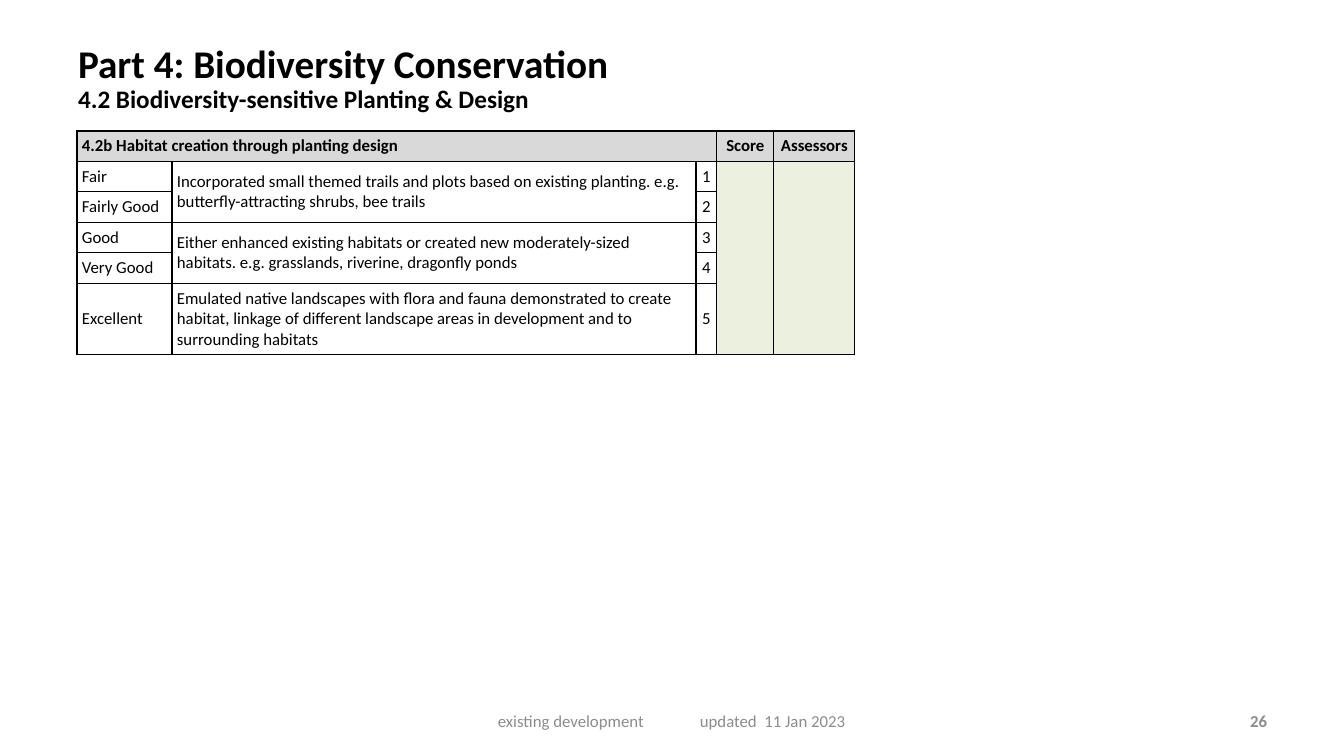
"""Build the scoring slide for planting design in biodiversity conservation."""
from lxml import etree
from pptx import Presentation
from pptx import util as u
from pptx.dml.color import RGBColor
from pptx.enum import text
from pptx.oxml.ns import qn

EMU_PER_PX = 914400 / 100.8


def px(length):
    return u.Emu(round(length * EMU_PER_PX))


def style(run, size, color, bold=False):
    for name, value in {"name": "Calibri", "size": u.Pt(size), "bold": bold}.items():
        setattr(run.font, name, value)
    run.font.color.rgb = RGBColor.from_string(color)


deck = Presentation()
deck.slide_width, deck.slide_height = px(1344), px(756)
slide = deck.slides.add_slide(deck.slide_layouts[5])

heading = slide.shapes.title
for name, value in {"left": 68, "top": 30, "width": 1044, "height": 98}.items():
    setattr(heading, name, px(value))
heading.text_frame.vertical_anchor = text.MSO_ANCHOR.MIDDLE
heading_line = heading.text_frame.paragraphs[0]
heading_line.alignment = text.PP_ALIGN.LEFT
heading_line.line_spacing = 0.9
part = heading_line.add_run()
part.text = "Part 4: Biodiversity Conservation"
style(part, 28, "000000", True)
heading_line.add_line_break()
section = heading_line.add_run()
section.text = "4.2 Biodiversity-sensitive Planting & Design"
style(section, 18, "000000", True)

criteria = [
    ["4.2b Habitat creation through planting design", "", "", "Score", "Assessors"],
    ["Fair", "Incorporated small themed trails and plots based on existing planting. "
     "e.g. butterfly-attracting shrubs, bee trails", "1", "", ""],
    ["Fairly Good", "", "2", "", ""],
    ["Good", "Either enhanced existing habitats or created new moderately-sized "
     "habitats. e.g. grasslands, riverine, dragonfly ponds", "3", "", ""],
    ["Very Good", "", "4", "", ""],
    ["Excellent", "Emulated native landscapes with flora and fauna demonstrated to create "
     "habitat, linkage of different landscape areas in development and to "
     "surrounding habitats", "5", "", ""],
]
column_widths = [95, 524, 21, 57, 81]
row_heights = [30, 30, 30, 30, 30, 71]
rubric = slide.shapes.add_table(
    len(row_heights), len(column_widths), px(77), px(131),
    px(sum(column_widths)), px(sum(row_heights))).table
for column, width in zip(rubric.columns, column_widths):
    column.width = px(width)
for row, height in zip(rubric.rows, row_heights):
    row.height = px(height)

for r, entries in enumerate(criteria):
    for c, entry in enumerate(entries):
        cell = rubric.cell(r, c)
        for side in ("left", "right", "top", "bottom"):
            setattr(cell, f"margin_{side}", px(5))
        cell.vertical_anchor = text.MSO_ANCHOR.MIDDLE
        for edge in ("a:lnL", "a:lnR", "a:lnT", "a:lnB"):
            border = etree.SubElement(cell._tc.get_or_add_tcPr(), qn(edge), w="12700")
            ink = etree.SubElement(border, qn("a:solidFill"))
            etree.SubElement(ink, qn("a:srgbClr"), val="000000")
        cell.fill.solid()
        shade = "D9D9D9" if r == 0 else "EBF1DE" if c > 2 else "FFFFFF"
        cell.fill.fore_color.rgb = RGBColor.from_string(shade)
        wording = cell.text_frame.paragraphs[0]
        wording.alignment = text.PP_ALIGN.CENTER if c > 1 else text.PP_ALIGN.LEFT
        if entry:
            label = wording.add_run()
            label.text = entry
            style(label, 12, "000000", r == 0)
        else:
            etree.SubElement(wording._p, qn("a:endParaRPr"), sz="1200")

for first, last in [((0, 0), (0, 2)), ((1, 1), (2, 1)), ((3, 1), (4, 1)),
                    ((1, 3), (5, 3)), ((1, 4), (5, 4))]:
    rubric.cell(*first).merge(rubric.cell(*last))

footers = [
    ("existing development\tupdated  11 Jan 2023", 488, 397, text.PP_ALIGN.LEFT, False),
    ("26", 964, 313, text.PP_ALIGN.RIGHT, True),
]
for wording, left, width, alignment, bold in footers:
    footer = slide.shapes.add_textbox(px(left), px(701), px(width), px(40)).text_frame
    footer.word_wrap = True
    footer.vertical_anchor = text.MSO_ANCHOR.MIDDLE
    footer_line = footer.paragraphs[0]
    footer_line.alignment = alignment
    if "\t" in wording:
        tabs = etree.SubElement(footer_line._p.get_or_add_pPr(), qn("a:tabLst"))
        etree.SubElement(tabs, qn("a:tab"), pos=str(px(202)), algn="l")
    note = footer_line.add_run()
    note.text = wording
    style(note, 12, "8C8C8C", bold)

deck.save("out.pptx")
